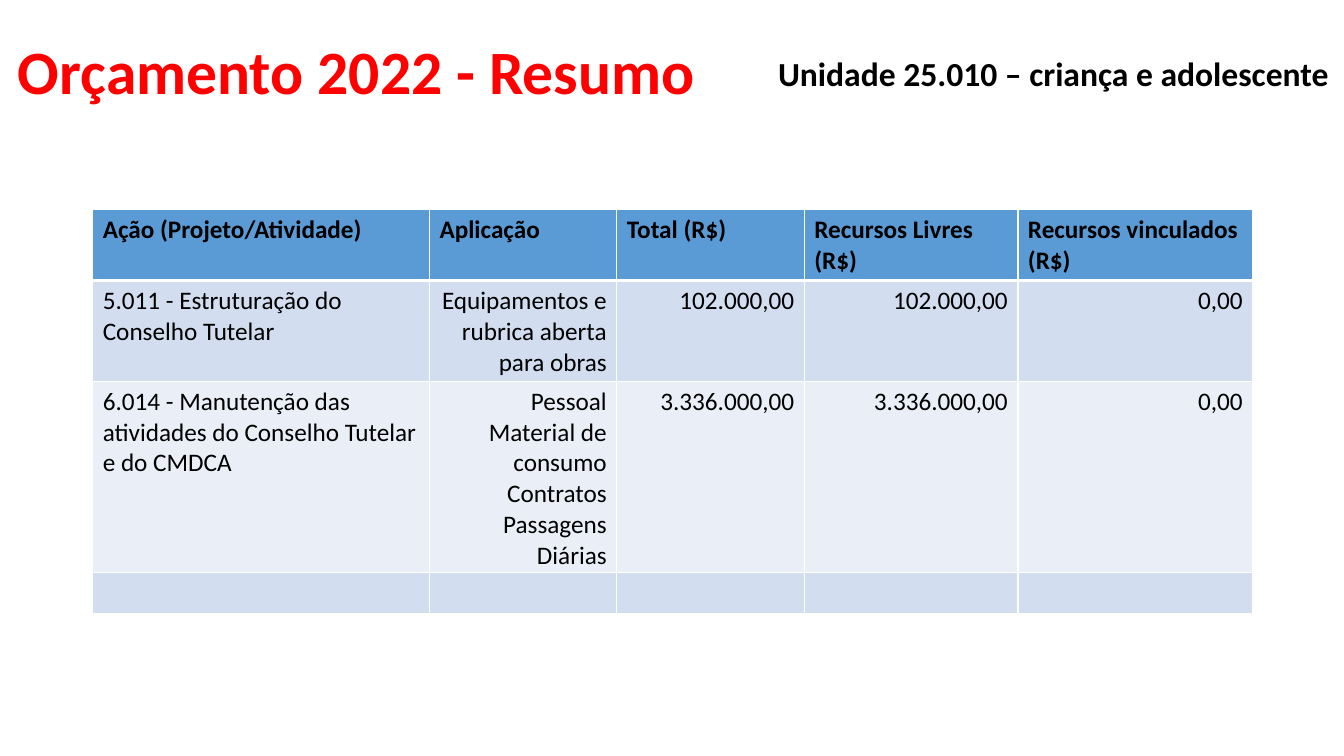
from dataclasses import dataclass

from lxml.etree import SubElement
from pptx import Presentation
from pptx.dml.color import RGBColor
from pptx.enum.text import MSO_ANCHOR, PP_ALIGN
from pptx.oxml.ns import qn
from pptx.slide import Slide
from pptx.table import _Cell
from pptx.text.text import TextFrame, _Paragraph
from pptx.util import Pt

RED = RGBColor(0xFF, 0x00, 0x00)
BLACK = RGBColor(0x00, 0x00, 0x00)
WHITE = RGBColor(0xFF, 0xFF, 0xFF)
HEADER_BLUE = RGBColor(0x5B, 0x9B, 0xD5)
BAND_DARK = RGBColor(0xD2, 0xDE, 0xEF)
BAND_LIGHT = RGBColor(0xEA, 0xEF, 0xF7)


@dataclass(frozen=True)
class Heading:
    text: str
    left: float
    top: float
    width: float
    height: float
    size: float
    color: RGBColor
    wrap: bool
    anchor: MSO_ANCHOR
    line_spacing: float


HEADINGS = [
    Heading("Orçamento 2022 - Resumo", 5.76, 0.72, 828, 104.4, 44, RED,
            True, MSO_ANCHOR.MIDDLE, 0.9),
    Heading("Unidade 25.010 – criança e adolescente", 548.64, 34.56, 411.84, 36, 24, BLACK,
            False, MSO_ANCHOR.TOP, 1.0),
]

TABLE_LEFT, TABLE_TOP = 66.24, 149.9
COLUMN_WIDTHS = [240.5, 133.9, 133.9, 152.6, 167.8]
ROW_HEIGHTS = [35.3, 29.2, 29.2, 29.2]
BUDGET_ROWS = [
    ["Ação (Projeto/Atividade)", "Aplicação", "Total (R$)",
     "Recursos Livres (R$)", "Recursos vinculados (R$)"],
    ["5.011 - Estruturação do Conselho Tutelar",
     "Equipamentos e rubrica aberta para obras", "102.000,00", "102.000,00", "0,00"],
    ["6.014 - Manutenção das atividades do Conselho Tutelar e do CMDCA",
     "Pessoal\nMaterial de consumo\nContratos\nPassagens\nDiárias",
     "3.336.000,00", "3.336.000,00", "0,00"],
    [""] * len(COLUMN_WIDTHS),
]


def format_font(paragraph: _Paragraph, size: float, color: RGBColor, bold: bool) -> None:
    for name, value in {"name": "Calibri", "size": Pt(size), "bold": bold}.items():
        setattr(paragraph.font, name, value)
    paragraph.font.color.rgb = color


def add_heading(slide: Slide, heading: Heading) -> None:
    shape = slide.shapes.add_textbox(
        Pt(heading.left), Pt(heading.top), Pt(heading.width), Pt(heading.height))
    frame: TextFrame = shape.text_frame
    settings = {"text": heading.text, "word_wrap": heading.wrap,
                "vertical_anchor": heading.anchor}
    for name, value in settings.items():
        setattr(frame, name, value)
    paragraph = frame.paragraphs[0]
    paragraph.line_spacing = heading.line_spacing
    format_font(paragraph, heading.size, heading.color, True)


def set_borders(cell: _Cell, widths: dict[str, float]) -> None:
    """Put white borders ahead of the cell fill, as the schema requires."""
    properties = cell._tc.get_or_add_tcPr()
    for position, (side, width) in enumerate(widths.items()):
        line = SubElement(properties, qn(f"a:{side}"), w=str(Pt(width)))
        fill = SubElement(line, qn("a:solidFill"))
        SubElement(fill, qn("a:srgbClr"), val=str(WHITE))
        properties.insert(position, line)


def fill_cell(cell: _Cell, text: str, row: int, column: int) -> None:
    is_header = row == 0
    cell.text = text
    cell.fill.solid()
    cell.fill.fore_color.rgb = (
        HEADER_BLUE if is_header else BAND_DARK if row % 2 else BAND_LIGHT)
    for paragraph in cell.text_frame.paragraphs:
        paragraph.alignment = PP_ALIGN.LEFT if is_header or column == 0 else PP_ALIGN.RIGHT
        format_font(paragraph, 18, BLACK, is_header)
    set_borders(cell, {"lnL": 1, "lnR": 1, "lnT": 3 if row == 1 else 1,
                       "lnB": 3 if is_header else 1})


def add_budget_table(slide: Slide) -> None:
    table = slide.shapes.add_table(
        len(ROW_HEIGHTS), len(COLUMN_WIDTHS), Pt(TABLE_LEFT), Pt(TABLE_TOP),
        Pt(sum(COLUMN_WIDTHS)), Pt(sum(ROW_HEIGHTS))).table
    for column, width in zip(table.columns, COLUMN_WIDTHS):
        column.width = Pt(width)
    for row, height in zip(table.rows, ROW_HEIGHTS):
        row.height = Pt(height)
    for row_index, texts in enumerate(BUDGET_ROWS):
        for column_index, text in enumerate(texts):
            fill_cell(table.cell(row_index, column_index), text, row_index, column_index)


def main() -> None:
    presentation = Presentation()
    presentation.slide_width, presentation.slide_height = Pt(960), Pt(540)
    slide = presentation.slides.add_slide(presentation.slide_layouts[6])
    for heading in HEADINGS:
        add_heading(slide, heading)
    add_budget_table(slide)
    presentation.save("out.pptx")


if __name__ == "__main__":
    main()
